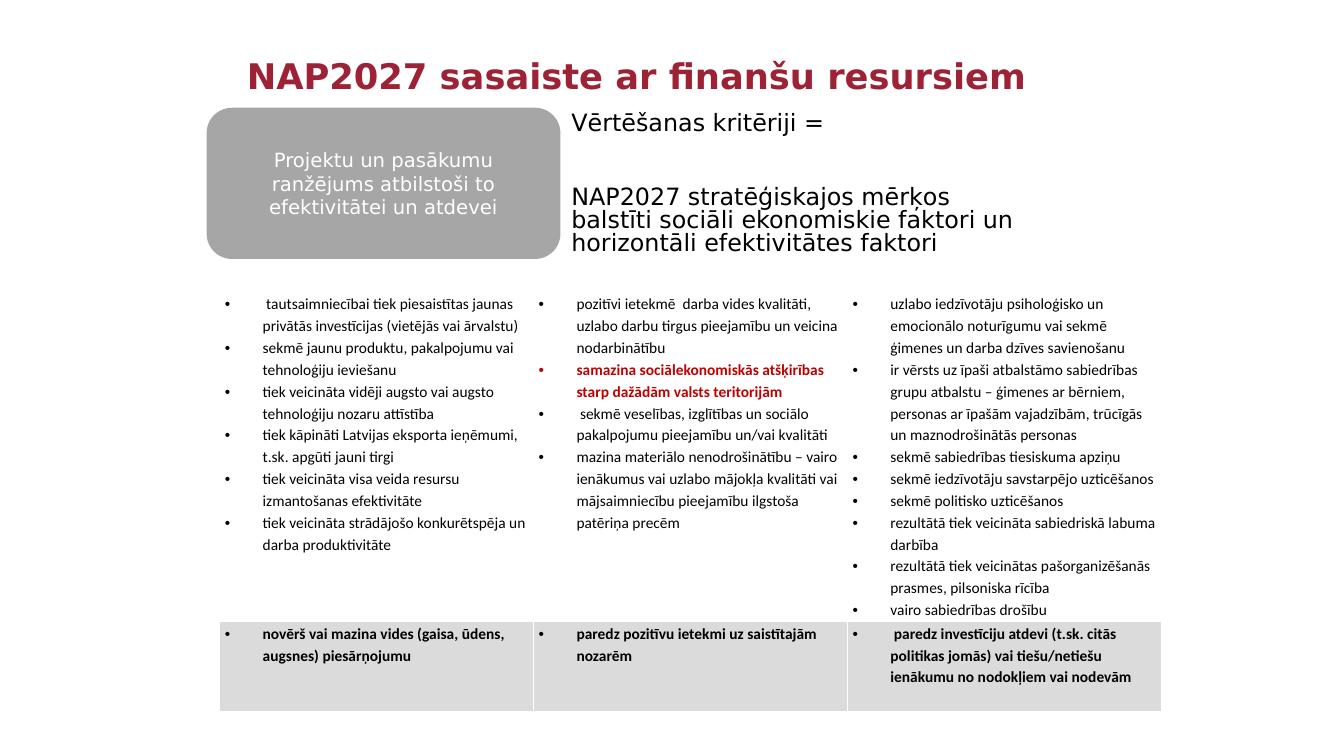
"""Builds the slide that links NAP2027 to financial resources."""
import lxml.etree
import pptx
import pptx.dml.color
import pptx.enum.shapes
import pptx.enum.text
import pptx.oxml
import pptx.oxml.ns
import pptx.util

Pt = pptx.util.Pt
ALIGN = pptx.enum.text.PP_ALIGN
ANCHOR = pptx.enum.text.MSO_ANCHOR
HEADING_FONT = "DejaVu Sans"
LIST_FONT = "Calibri"
HIGHLIGHT = "samazina sociālekonomiskās atšķirības starp dažādām valsts teritorijām"
CRITERIA = [
    [
        " tautsaimniecībai tiek piesaistītas jaunas privātās investīcijas (vietējās vai ārvalstu)",
        "sekmē jaunu produktu, pakalpojumu vai tehnoloģiju ieviešanu",
        "tiek veicināta vidēji augsto vai augsto tehnoloģiju nozaru attīstība",
        "tiek kāpināti Latvijas eksporta ieņēmumi, t.sk. apgūti jauni tirgi",
        "tiek veicināta visa veida resursu izmantošanas efektivitāte",
        "tiek veicināta strādājošo konkurētspēja un darba produktivitāte",
    ],
    [
        "pozitīvi ietekmē  darba vides kvalitāti, uzlabo darbu tirgus pieejamību un veicina  nodarbinātību",
        HIGHLIGHT,
        " sekmē veselības, izglītības un sociālo pakalpojumu pieejamību un/vai kvalitāti",
        "mazina materiālo nenodrošinātību – vairo ienākumus vai uzlabo mājokļa kvalitāti vai "
        "mājsaimniecību pieejamību ilgstoša patēriņa precēm",
    ],
    [
        "uzlabo iedzīvotāju psiholoģisko un emocionālo noturīgumu vai sekmē ģimenes un darba dzīves savienošanu",
        "ir vērsts uz īpaši atbalstāmo sabiedrības grupu atbalstu – ģimenes ar bērniem, "
        "personas ar īpašām vajadzībām, trūcīgās un maznodrošinātās personas",
        "sekmē sabiedrības tiesiskuma apziņu",
        "sekmē iedzīvotāju savstarpējo uzticēšanos",
        "sekmē politisko uzticēšanos",
        "rezultātā tiek veicināta sabiedriskā labuma darbība",
        "rezultātā tiek veicinātas pašorganizēšanās prasmes, pilsoniska rīcība",
        "vairo sabiedrības drošību",
    ],
]
HORIZONTAL_FACTORS = [
    ["novērš vai mazina vides (gaisa, ūdens, augsnes) piesārņojumu"],
    ["paredz pozitīvu ietekmi uz saistītajām nozarēm"],
    [" paredz investīciju atdevi (t.sk. citās politikas jomās) vai tiešu/netiešu "
     "ienākumu no nodokļiem vai nodevām"],
]


def color(hex_code):
    """Return the colour for a hex string."""
    return pptx.dml.color.RGBColor.from_string(hex_code)


def write(frame, text, size, font=HEADING_FONT, ink="000000", bold=False,
          align=ALIGN.LEFT, spacing=1.0, before=0, bullet=False):
    """Add one formatted paragraph, using the first one while it is empty."""
    first = frame.paragraphs[0]
    paragraph = frame.add_paragraph() if first.runs else first
    paragraph.alignment = align
    paragraph.line_spacing = spacing
    paragraph.space_before = Pt(before)
    run = paragraph.add_run()
    run.text = text
    run.font.size = Pt(size)
    run.font.name = font
    run.font.bold = bold
    run.font.color.rgb = color(ink)
    if bullet:
        properties = paragraph._p.get_or_add_pPr()
        properties.set("marL", str(Pt(27)))
        properties.set("indent", str(-Pt(27)))
        for tag, name, value in (("a:buFont", "typeface", "Arial"), ("a:buChar", "char", "•")):
            mark = lxml.etree.SubElement(properties, pptx.oxml.ns.qn(tag))
            mark.set(name, value)


def text_frame(slide, box, anchor):
    """Add a wrapping text box and return its frame."""
    frame = slide.shapes.add_textbox(*map(Pt, box)).text_frame
    frame.word_wrap = True
    frame.vertical_anchor = anchor
    return frame


def add_title(slide, box):
    """Place the slide title."""
    write(text_frame(slide, box, ANCHOR.MIDDLE), "NAP2027 sasaiste ar finanšu resursiem",
          25.2, ink="9D2235", bold=True, spacing=0.9)


def add_ranking(slide, box):
    """Place the rounded box on project ranking."""
    ranking = slide.shapes.add_shape(pptx.enum.shapes.MSO_SHAPE.ROUNDED_RECTANGLE, *map(Pt, box))
    ranking.shadow.inherit = False
    ranking.fill.solid()
    ranking.fill.fore_color.rgb = color("A6A6A6")
    ranking.line.fill.background()
    ranking.text_frame.word_wrap = True
    ranking.text_frame.vertical_anchor = ANCHOR.MIDDLE
    write(ranking.text_frame, "Projektu un pasākumu ranžējums atbilstoši to efektivitātei un atdevei",
          14, ink="FFFFFF", align=ALIGN.CENTER)


def add_definition(slide, box):
    """Place the definition of the assessment criteria."""
    frame = text_frame(slide, box, ANCHOR.TOP)
    write(frame, "Vērtēšanas kritēriji =", 17, spacing=0.8)
    write(frame, "NAP2027 stratēģiskajos mērķos balstīti sociāli ekonomiskie faktori un "
          "horizontāli efektivitātes faktori", 17, spacing=0.8, before=37)


def add_borders(cell):
    """Give a cell thin white borders."""
    properties = cell._tc.get_or_add_tcPr()
    for position, side in enumerate(("lnL", "lnR", "lnT", "lnB")):
        border = pptx.oxml.parse_xml(
            f'<a:{side} {pptx.oxml.ns.nsdecls("a")} w="{Pt(1)}"><a:solidFill>'
            f'<a:srgbClr val="FFFFFF"/></a:solidFill></a:{side}>')
        properties.insert(position, border)


def add_criteria(slide, box, heights):
    """Place the table of criteria above the horizontal factors."""
    rows = [(CRITERIA, None, False), (HORIZONTAL_FACTORS, "DBDBDB", True)]
    table = slide.shapes.add_table(len(rows), len(CRITERIA), *map(Pt, box)).table
    table.first_row = False
    table.horz_banding = False
    for column in table.columns:
        column.width = Pt(box[2] / len(CRITERIA))
    for row_index, (groups, fill, bold) in enumerate(rows):
        table.rows[row_index].height = Pt(heights[row_index])
        for column_index, items in enumerate(groups):
            cell = table.cell(row_index, column_index)
            cell.margin_left = cell.margin_right = Pt(3.6)
            cell.margin_top = cell.margin_bottom = Pt(0)
            if fill:
                cell.fill.solid()
                cell.fill.fore_color.rgb = color(fill)
            else:
                cell.fill.background()
            add_borders(cell)
            for item in items:
                marked = item == HIGHLIGHT
                write(cell.text_frame, item, 11, font=LIST_FONT, spacing=1.15, bullet=True,
                      bold=bold or marked, ink="C00000" if marked else "000000")


def main():
    """Build and save the slide."""
    deck = pptx.Presentation()
    deck.slide_width, deck.slide_height = Pt(960), Pt(540)
    slide = deck.slides.add_slide(deck.slide_layouts[6])
    add_title(slide, (169.2, 28.8, 620.6, 53.3))
    add_ranking(slide, (147.6, 77, 252.7, 108))
    add_definition(slide, (401, 77, 334.8, 113))
    heights = (235.3, 64)
    add_criteria(slide, (157, 208.8, 672.6, sum(heights)), heights)
    deck.save("out.pptx")


if __name__ == "__main__":
    main()
